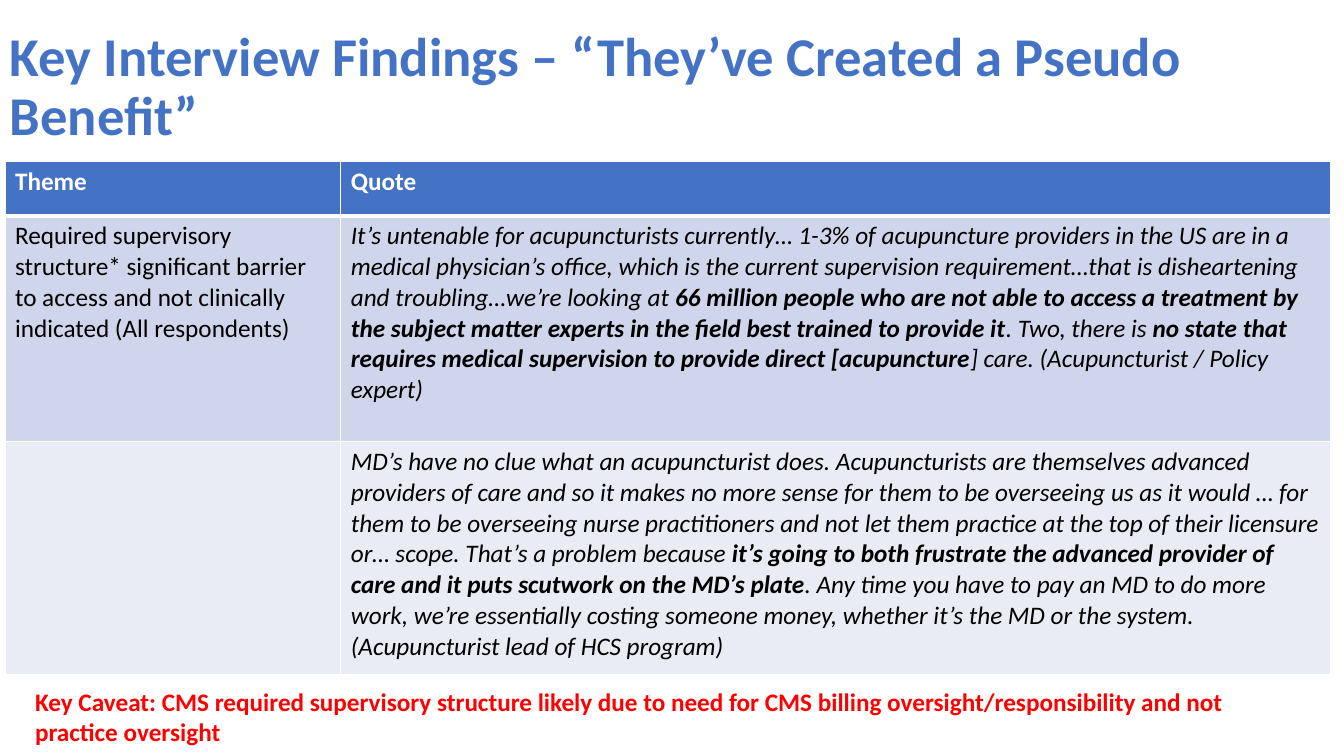
"""Build the interview findings slide with its table of themes and quotes."""
from dataclasses import dataclass

from lxml.etree import SubElement
from pptx import Presentation
from pptx.dml.color import RGBColor
from pptx.enum.text import MSO_ANCHOR
from pptx.oxml.ns import qn
from pptx.slide import Slide
from pptx.table import _Cell
from pptx.text.text import TextFrame
from pptx.util import Inches, Pt

BLUE, WHITE, BLACK, RED = "4472C4", "FFFFFF", "000000", "FF0000"
COLUMN_WIDTHS = (3.33, 9.82)


@dataclass(frozen=True)
class Phrase:
    text: str
    bold: bool = False
    italic: bool = False


@dataclass(frozen=True)
class TextStyle:
    size: float
    color: str


@dataclass(frozen=True)
class Caption:
    left: float
    top: float
    width: float
    height: float
    text: str
    style: TextStyle
    anchor: MSO_ANCHOR = MSO_ANCHOR.TOP
    line_spacing: float = 1.0


@dataclass(frozen=True)
class FindingRow:
    height: float
    fill: str
    style: TextStyle
    cells: tuple[tuple[Phrase, ...], ...]
    top_border: float = 1
    bottom_border: float = 1


def quote(*texts: str) -> tuple[Phrase, ...]:
    """Alternate plain and bold italic phrases."""
    return tuple(Phrase(text, index % 2 == 1, True) for index, text in enumerate(texts))


CAPTIONS = (
    Caption(0, 0.15, 13.24, 1.45, "Key Interview Findings – “They’ve Created a Pseudo Benefit”",
            TextStyle(39, BLUE), MSO_ANCHOR.MIDDLE, 0.9),
    Caption(0.25, 6.76, 12.73, 0.36,
            "Key Caveat: CMS required supervisory structure likely due to need for CMS billing "
            "oversight/responsibility and not practice oversight", TextStyle(18, RED)),
)

ROWS = (
    FindingRow(0.54, BLUE, TextStyle(18, WHITE),
               ((Phrase("Theme", True),), (Phrase("Quote", True),)), bottom_border=3),
    FindingRow(2.24, "CFD5EA", TextStyle(18, BLACK), (
        (Phrase("Required supervisory structure* significant barrier to access and not "
                "clinically indicated (All respondents)"),),
        quote(
            "It’s untenable for acupuncturists currently… 1-3% of acupuncture providers in the US "
            "are in a medical physician’s office, which is the current supervision "
            "requirement…that is disheartening and troubling…we’re looking at ",
            "66 million people who are not able to access a treatment by the subject matter "
            "experts in the field best trained to provide it",
            ". Two, there is ",
            "no state that requires medical supervision to provide direct [acupuncture",
            "] care. (Acupuncturist / Policy expert)",
        ),
    ), top_border=3),
    FindingRow(2.31, "E9EBF5", TextStyle(18, BLACK), (
        (),
        quote(
            "MD’s have no clue what an acupuncturist does. Acupuncturists are themselves advanced "
            "providers of care and so it makes no more sense for them to be overseeing us as it "
            "would … for them to be overseeing nurse practitioners and not let them practice at "
            "the top of their licensure or… scope. That’s a problem because ",
            "it’s going to both frustrate the advanced provider of care and it puts scutwork on "
            "the MD’s plate",
            ". Any time you have to pay an MD to do more work, we’re essentially costing someone "
            "money, whether it’s the MD or the system. (Acupuncturist lead of HCS program)",
        ),
    )),
)


def color(value: str) -> RGBColor:
    """Turn a hex string into a colour."""
    return RGBColor.from_string(value)


def write_phrases(text_frame: TextFrame, phrases: tuple[Phrase, ...], style: TextStyle) -> None:
    """Write formatted phrases into the first paragraph."""
    paragraph = text_frame.paragraphs[0]
    for phrase in phrases:
        run = paragraph.add_run()
        run.text = phrase.text
        run.font.name = "Calibri"
        run.font.size = Pt(style.size)
        run.font.bold = phrase.bold
        run.font.italic = phrase.italic
        run.font.color.rgb = color(style.color)


def add_caption(slide: Slide, caption: Caption) -> None:
    """Add a wrapped bold text box."""
    box = slide.shapes.add_textbox(Inches(caption.left), Inches(caption.top),
                                   Inches(caption.width), Inches(caption.height))
    text_frame = box.text_frame
    text_frame.word_wrap = True
    text_frame.vertical_anchor = caption.anchor
    text_frame.paragraphs[0].line_spacing = caption.line_spacing
    write_phrases(text_frame, (Phrase(caption.text, True),), caption.style)


def set_borders(cell: _Cell, top: float, bottom: float) -> None:
    """Give a cell white borders."""
    properties = cell._tc.get_or_add_tcPr()
    for side, width in (("L", 1), ("R", 1), ("T", top), ("B", bottom)):
        line = SubElement(properties, qn(f"a:ln{side}"), w=str(Pt(width)))
        fill = SubElement(line, qn("a:solidFill"))
        SubElement(fill, qn("a:srgbClr"), val=WHITE)


def add_findings_table(slide: Slide, rows: tuple[FindingRow, ...]) -> None:
    """Add the table of themes and quotes."""
    frame = slide.shapes.add_table(
        len(rows), len(COLUMN_WIDTHS), Inches(0.05), Inches(1.6),
        Inches(sum(COLUMN_WIDTHS)), Inches(sum(row.height for row in rows)))
    table = frame.table
    for column, width in zip(table.columns, COLUMN_WIDTHS):
        column.width = Inches(width)
    for table_row, row in zip(table.rows, rows):
        table_row.height = Inches(row.height)
        for cell, phrases in zip(table_row.cells, row.cells):
            set_borders(cell, row.top_border, row.bottom_border)
            cell.fill.solid()
            cell.fill.fore_color.rgb = color(row.fill)
            write_phrases(cell.text_frame, phrases, row.style)


def main() -> None:
    """Create and save the presentation."""
    presentation = Presentation()
    presentation.slide_width = Inches(13.33)
    presentation.slide_height = Inches(7.5)
    slide = presentation.slides.add_slide(presentation.slide_layouts[6])
    add_findings_table(slide, ROWS)
    for caption in CAPTIONS:
        add_caption(slide, caption)
    presentation.save("out.pptx")


if __name__ == "__main__":
    main()
